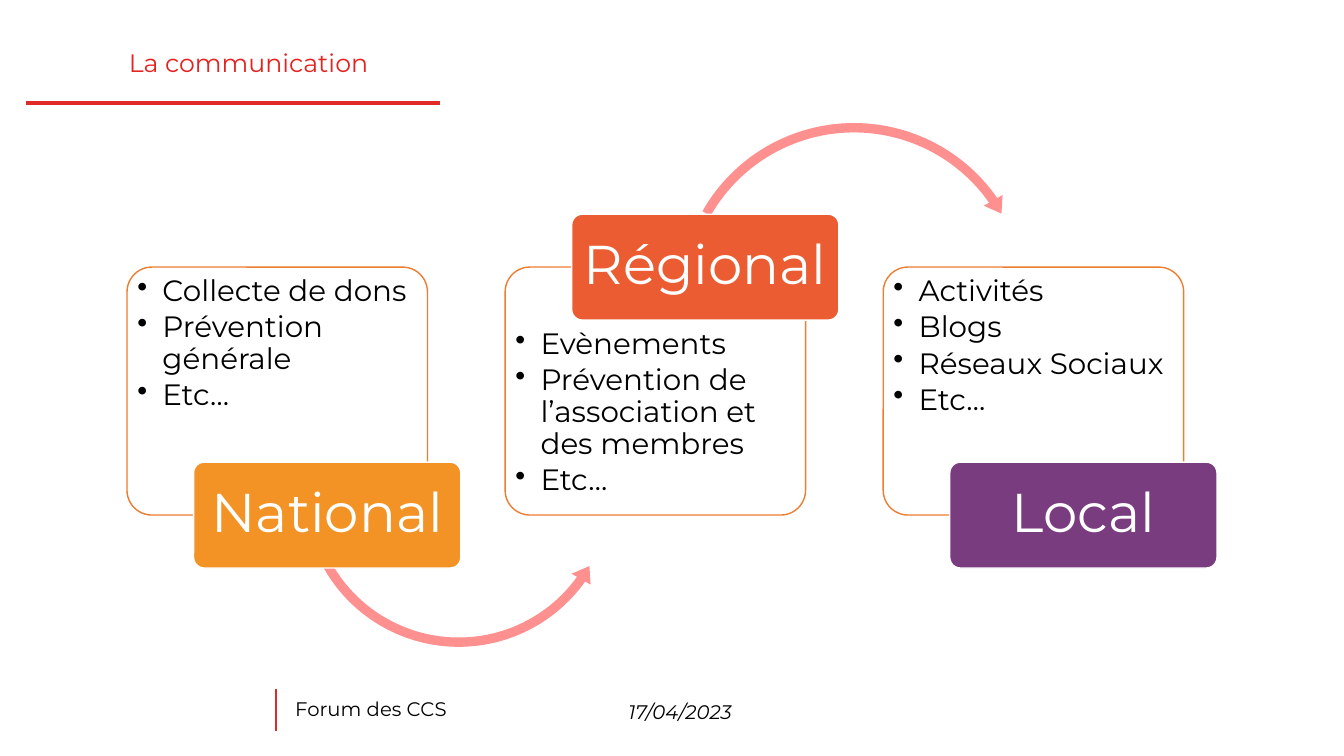
from lxml import etree
from pptx import Presentation
from pptx import util as u
from pptx.dml.color import RGBColor
from pptx.enum import shapes, text
from pptx.oxml.ns import qn

HUES = {"red": "E52321", "rule": "DF2A28", "edge": "ED7D31", "arrow": "FF9090",
        "amber": "F39325", "orange": "EB5C32", "purple": "793C7F",
        "white": "FFFFFF", "black": "000000"}
FONT = "Montserrat"
KIND = shapes.MSO_SHAPE
MID = text.PP_ALIGN.CENTER

deck = Presentation()
deck.slide_width, deck.slide_height = u.Inches(13.33), u.Inches(7.5)
slide = deck.slides.add_slide(deck.slide_layouts[6])


def draw(kind, box, fill, edge=None, adj=()):
    """Add a preset shape; box is left, top, width, height in inches."""
    item = slide.shapes.add_shape(kind, *map(u.Inches, box))
    item.shadow.inherit = False
    for i, value in enumerate(adj):
        item.adjustments[i] = value
    item.fill.solid()
    item.fill.fore_color.rgb = RGBColor.from_string(HUES[fill])
    if edge:
        item.line.color.rgb = RGBColor.from_string(HUES[edge])
        item.line.width = u.Pt(1)
    else:
        item.line.fill.background()
    return item


def write(item, words, size, hue="black", align=None, after=0, bullet=False,
          pads=(0.1, 0.05, 0.1, 0.05), anchor=text.MSO_ANCHOR.TOP):
    """Fill a shape with text; pads are left, top, right, bottom in inches."""
    frame = item.text_frame
    frame.word_wrap = True
    frame.vertical_anchor = anchor
    (frame.margin_left, frame.margin_top,
     frame.margin_right, frame.margin_bottom) = map(u.Inches, pads)
    frame.text = "\n".join(words)
    for para in frame.paragraphs:
        para.alignment = align or text.PP_ALIGN.LEFT
        para.line_spacing = 0.9
        para.space_after = u.Pt(after)
        if bullet:
            props = para._p.get_or_add_pPr()
            props.set("marL", str(u.Inches(0.25)))
            props.set("indent", str(-u.Inches(0.25)))
            etree.SubElement(props, qn("a:buChar")).set("char", "•")
        for run in para.runs:
            run.font.size, run.font.name = u.Pt(size), FONT
            run.font.color.rgb = RGBColor.from_string(HUES[hue])


# Header and footer
for ends, width in [((2.74, 6.84, 2.74, 7.25), 1.5), ((0.26, 1.02, 4.36, 1.02), 2.5)]:
    rule = slide.shapes.add_connector(shapes.MSO_CONNECTOR.STRAIGHT, *map(u.Inches, ends))
    rule.line.color.rgb = RGBColor.from_string(HUES["rule"])
    rule.line.width = u.Pt(width)
    etree.SubElement(rule._element.spPr, qn("a:effectLst"))

for words, box, size, hue, align in [
        ("La communication", (1.18, 0.45, 8.75, 0.41), 18, "red", None),
        ("Forum des CCS", (2.83, 6.89, 3.16, 0.54), 14, "black", None),
        ("17/04/2023", (5.99, 6.89, 1.51, 0.34), 14, "black", MID)]:
    note = slide.shapes.add_textbox(*map(u.Inches, box))
    write(note, [words], size, hue, align)
date = note.text_frame.paragraphs[0]
date.line_spacing = 1.0
date.runs[0].font.italic = True

# Three levels: a card, an arrow to the next one, a label across the card's edge
LEFT, TOP, STEP = 1.26, 2.65, 3.75
WIDE, HIGH = 2.98, 2.46
TAG_W, TAG_H = 2.65, 1.05
levels = [
    ("National", "amber", False, ["Collecte de dons", "Prévention générale", "Etc…"],
     (KIND.LEFT_CIRCULAR_ARROW, (2.95, 3.28, 3.2, 3.2),
      (0.029, 3.56, 21.315, 90.245, 0.034))),
    ("Régional", "orange", True,
     ["Evènements", "Prévention de l’association et des membres", "Etc…"],
     (KIND.CIRCULAR_ARROW, (6.68, 1.16, 3.58, 3.58),
      (0.026, 3.16, 195.085, 125.755, 0.03))),
    ("Local", "purple", False, ["Activités", "Blogs", "Réseaux Sociaux", "Etc…"], None),
]
for col, (name, hue, above, points, arrow) in enumerate(levels):
    x = LEFT + col * STEP
    card = draw(KIND.ROUNDED_RECTANGLE, (x, TOP, WIDE, HIGH), "white", "edge", [0.1])
    head = TAG_H / 2 if above else 0
    write(card, points, 21, after=3.15, bullet=True, pads=(0.03, 0.02 + head, 0.03, 0.02))
    if arrow:
        kind, box, adj = arrow
        draw(kind, box, "arrow", adj=adj)
    y = (TOP if above else TOP + HIGH) - TAG_H / 2
    tag = draw(KIND.ROUNDED_RECTANGLE, (x + 0.66, y, TAG_W, TAG_H), hue, "white", [0.1])
    write(tag, [name], 39, "white", MID, pads=(0.08, 0.05, 0.08, 0.05),
          anchor=text.MSO_ANCHOR.MIDDLE)

deck.save("out.pptx")
